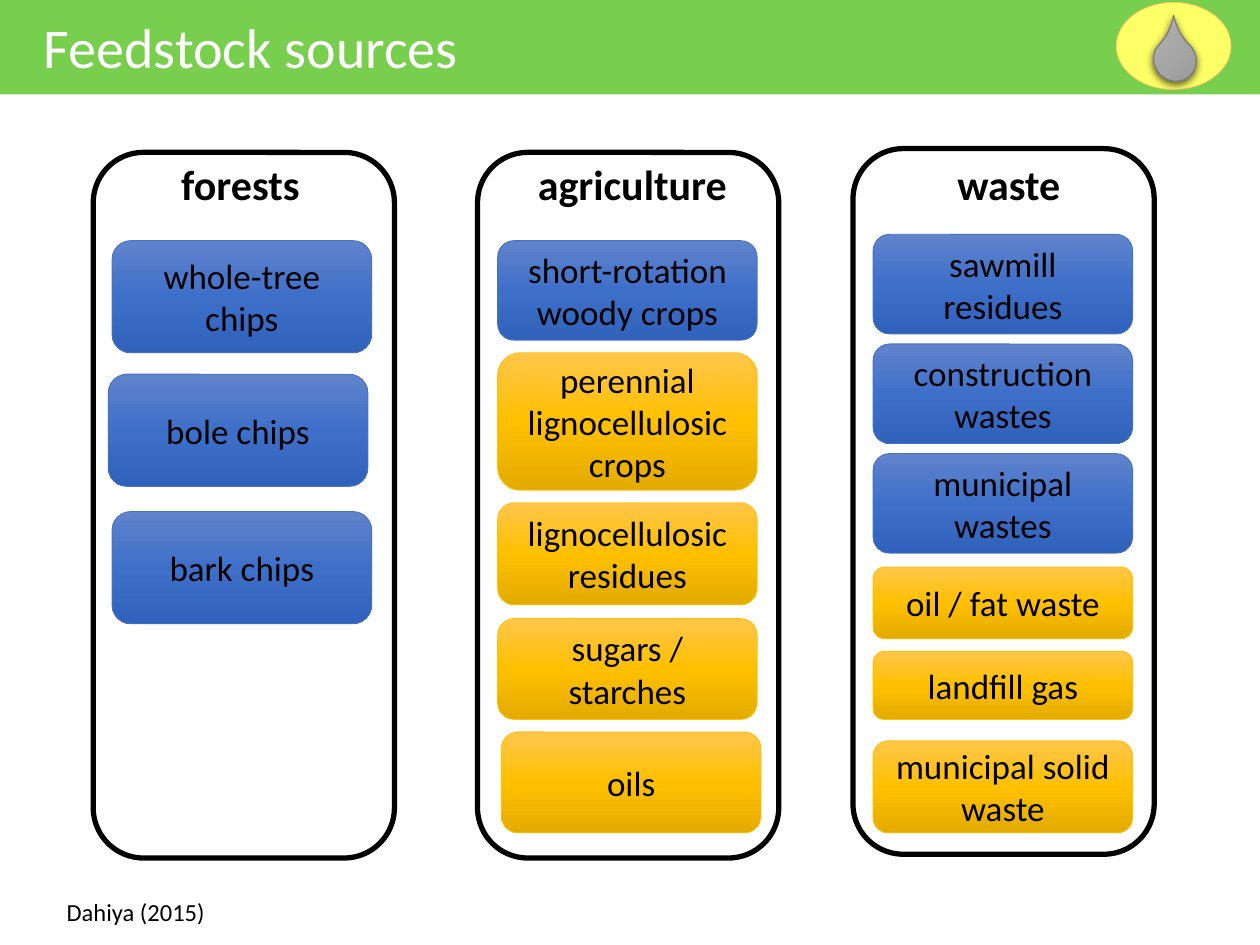
import copy

import lxml.etree
import pptx
import pptx.dml.color
import pptx.enum.shapes
import pptx.enum.text
import pptx.oxml.ns
import pptx.util

Inches = pptx.util.Inches
Pt = pptx.util.Pt
RGB = pptx.dml.color.RGBColor.from_string
qn = pptx.oxml.ns.qn
KIND = pptx.enum.shapes.MSO_SHAPE
TEXT = pptx.enum.text

COLORS = {
    "header": "78CE4D",
    "white": "FFFFFF",
    "black": "000000",
    "badge": "FFFF66",
    "badge_line": "FFCC66",
}
GRADIENTS = {
    "blue": (["6183CB", "3E70CA", "3062BB"], "4472C4"),
    "gold": (["FFC64B", "FFC000", "E3AB00"], "FFC000"),
    "gray": (["AFAFAF", "A5A5A5", "939393"], "7C7C7C"),
}
CARD_WIDTH = 2.06


def write(box, text, size, color="black", bold=False):
    para = box.text_frame.paragraphs[0]
    for number, line in enumerate(text.split("\n")):
        if number:
            para.add_line_break()
        span = para.add_run()
        span.text = line
        span.font.name = "Calibri"
        span.font.size = Pt(size)
        span.font.bold = bold
        span.font.color.rgb = RGB(COLORS[color])
    return para


def paint_gradient(shape, name, line_width):
    stops, line = GRADIENTS[name]
    shape.shadow.inherit = False
    shape.fill.gradient()
    shape.fill.gradient_angle = 270
    stop_list = shape.element.spPr.find(".//" + qn("a:gsLst"))
    stop_list.append(copy.deepcopy(stop_list[-1]))
    for stop, color, position in zip(shape.fill.gradient_stops, stops, (0, 0.5, 1)):
        stop.color.rgb = RGB(color)
        stop.position = position
    shape.line.color.rgb = RGB(line)
    shape.line.width = Pt(line_width)


deck = pptx.Presentation()
deck.slide_width = Inches(10)
deck.slide_height = Inches(7.5)
page = deck.slides.add_slide(deck.slide_layouts[6])

header = page.shapes.add_shape(KIND.RECTANGLE, 0, 0, Inches(10.01), Inches(0.75))
header.shadow.inherit = False
header.fill.solid()
header.fill.fore_color.rgb = RGB(COLORS["header"])
header.line.fill.background()

columns = [
    (0.74, 1.21, [
        (0.89, 1.91, 0.89, "blue", "whole-tree\nchips"),
        (0.86, 2.97, 0.89, "blue", "bole chips"),
        (0.89, 4.06, 0.89, "blue", "bark chips"),
    ]),
    (3.79, 1.21, [
        (3.95, 1.91, 0.79, "blue", "short-rotation woody crops"),
        (3.95, 2.8, 1.09, "gold", "perennial lignocellulosic crops"),
        (3.95, 3.99, 0.81, "gold", "lignocellulosic residues"),
        (3.95, 4.91, 0.8, "gold", "sugars / starches"),
        (3.98, 5.81, 0.8, "gold", "oils"),
    ]),
    (6.77, 1.18, [
        (6.93, 1.86, 0.79, "blue", "sawmill residues"),
        (6.93, 2.73, 0.79, "blue", "construction wastes"),
        (6.93, 3.6, 0.79, "blue", "municipal wastes"),
        (6.93, 4.5, 0.57, "gold", "oil / fat waste"),
        (6.93, 5.17, 0.54, "gold", "landfill gas"),
        (6.93, 5.88, 0.73, "gold", "municipal solid waste"),
    ]),
]
for column_left, column_top, cards in columns:
    frame = page.shapes.add_shape(
        KIND.ROUNDED_RECTANGLE, Inches(column_left), Inches(column_top), Inches(2.39), Inches(5.6))
    frame.shadow.inherit = False
    frame.fill.background()
    frame.line.color.rgb = RGB(COLORS["black"])
    frame.line.width = Pt(3)
    for left, top, height, color, text in cards:
        card = page.shapes.add_shape(
            KIND.ROUNDED_RECTANGLE, Inches(left), Inches(top), Inches(CARD_WIDTH), Inches(height))
        paint_gradient(card, color, 0.5)
        card.text_frame.word_wrap = True
        card.text_frame.vertical_anchor = TEXT.MSO_ANCHOR.MIDDLE
        write(card, text, 20).alignment = TEXT.PP_ALIGN.CENTER

labels = [
    (0.25, 0.05, 4.07, 0.64, "Feedstock sources", 32, "white", False),
    (0.43, 7.07, 1.31, 0.34, "Dahiya (2015)", 14, "black", False),
    (1.34, 1.21, 1.16, 0.5, "forests", 24, "black", True),
    (4.17, 1.21, 1.72, 0.5, "agriculture", 24, "black", True),
    (7.5, 1.21, 1.04, 0.5, "waste", 24, "black", True),
]
for left, top, width, height, text, size, color, bold in labels:
    box = page.shapes.add_textbox(Inches(left), Inches(top), Inches(width), Inches(height))
    box.text_frame.word_wrap = False
    box.text_frame.auto_size = TEXT.MSO_AUTO_SIZE.SHAPE_TO_FIT_TEXT
    write(box, text, size, color, bold)

badge = page.shapes.add_group_shape()
disc = badge.shapes.add_shape(KIND.OVAL, Inches(8.86), Inches(0.02), Inches(0.91), Inches(0.69))
disc.shadow.inherit = False
disc.fill.solid()
disc.fill.fore_color.rgb = RGB(COLORS["badge"])
disc.line.color.rgb = RGB(COLORS["badge_line"])
disc.line.width = Pt(0.5)

drop = badge.shapes.add_shape(KIND.TEAR, Inches(9.16), Inches(0.3), Inches(0.33), Inches(0.35))
drop.adjustments[0] = 1.465
drop.rotation = 314.8
paint_gradient(drop, "gray", 0.75)
effects = drop.element.spPr.find(qn("a:effectLst"))
shadow = lxml.etree.SubElement(
    effects, qn("a:outerShdw"), blurRad=str(Pt(4.5)), dist=str(Pt(1.5)),
    dir="5400000", algn="ctr", rotWithShape="0")
shade = lxml.etree.SubElement(shadow, qn("a:srgbClr"), val=COLORS["black"])
lxml.etree.SubElement(shade, qn("a:alpha"), val="63000")

deck.save("out.pptx")
